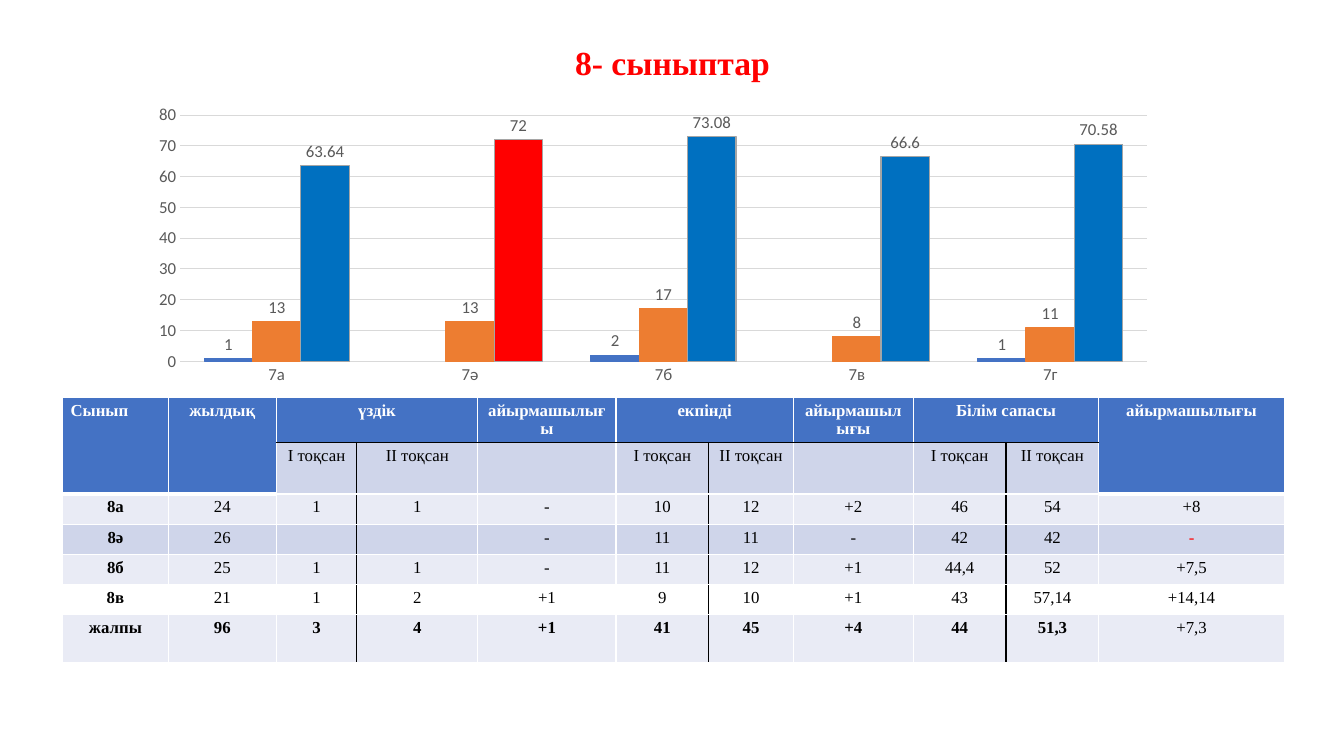
from lxml import etree
from pptx import Presentation
from pptx import util as u
from pptx.chart import data as chart_data
from pptx.dml import color
from pptx.enum import chart as ch, text
from pptx.oxml import ns

COLORS = {
    "red": "FF0000", "black": "000000", "white": "FFFFFF", "label": "595959",
    "grid": "D9D9D9", "blue": "4472C4", "orange": "ED7D31", "quality": "0070C0",
    "outline": "A5A5A5", "band_dark": "CFD5EA", "band_light": "E9EBF5",
}

# Chart content: values, fill and outline of each series
CLASSES = ["7а", "7ә", "7б", "7в", "7г"]
SERIES = [
    ("Series 1", [1, None, 2, None, 1], "blue", "blue"),
    ("Series 2", [13, 13, 17, 8, 11], "orange", "orange"),
    ("Series 3", [63.64, 72, 73.08, 66.6, 70.58], "quality", "outline"),
]

# Table content
COLUMN_WIDTHS = [1.05, 1.07, 0.8, 1.2, 1.37, 0.92, 0.84, 1.19, 0.92, 0.92, 1.84]
ROW_HEIGHTS = [0.43, 0.51, 0.3, 0.3, 0.3, 0.3, 0.47]
ROW_FILLS = ["blue", "band_dark", "band_light", "band_dark", "band_light", None, "band_light"]
DIFF, Q1, Q2 = "айырмашылығы", "І тоқсан", "ІІ тоқсан"
ROWS = [
    ["Сынып", "жылдық", "үздік", "", DIFF, "екпінді", "", DIFF, "Білім сапасы", "", DIFF],
    ["", "", Q1, Q2, "", Q1, Q2, "", Q1, Q2, ""],
    ["8а", "24", "1", "1", "-", "10", "12", "+2", "46", "54", "+8"],
    ["8ә", "26", "", "", "-", "11", "11", "-", "42", "42", "-"],
    ["8б", "25", "1", "1", "-", "11", "12", "+1", "44,4", "52", "+7,5"],
    ["8в", "21", "1", "2", "+1", "9", "10", "+1", "43", "57,14", "+14,14"],
    ["жалпы", "96", "3", "4", "+1", "41", "45", "+4", "44", "51,3", "+7,3"],
]
TALL_HEADERS = (0, 1, 10)   # headers that span both header rows
QUARTER_PAIRS = (2, 5, 8)   # first column of each pair of quarters
TOTAL_ROW, LAST_COLUMN = len(ROWS) - 1, len(COLUMN_WIDTHS) - 1


def rgb(name):
    return color.RGBColor.from_string(COLORS[name])


def is_bold(row, column):
    if row == TOTAL_ROW:
        return column != LAST_COLUMN
    return row == 0 or (row > 1 and column == 0)


def text_color(row, column):
    if row == 0:
        return "white"
    return "red" if (row, column) == (3, LAST_COLUMN) else "black"


def borders(row, column):
    """Colour and width of the four sides of a cell, keyed by XML tag."""
    sides = {tag: ("white", 1) for tag in ("a:lnL", "a:lnR", "a:lnT", "a:lnB")}
    if column in TALL_HEADERS and row < 2:
        sides["a:lnB"] = ("white", 3)
    elif row < 2:
        sides["a:lnB" if row == 0 else "a:lnT"] = ("black", 1)
    if row > 0 and column in QUARTER_PAIRS:
        sides["a:lnR"] = ("black", 1)
    if row > 0 and column - 1 in QUARTER_PAIRS:
        sides["a:lnL"] = ("black", 1)
    return sides


class SlideBuilder:
    """Holds the style and the current slide."""
    serif, sans = "Times New Roman", "Calibri"
    text_size = u.Pt(12)
    hairline = u.Pt(0.75)

    def __init__(self, deck):
        self.slide = deck.slides.add_slide(deck.slide_layouts[5])

    def style_font(self, font, face, size, color_name, bold=False):
        font.name, font.size, font.bold = face, size, bold
        font.color.rgb = rgb(color_name)

    def title(self, words, left, top, width, height):
        heading = self.slide.shapes.title
        heading.left, heading.top = u.Inches(left), u.Inches(top)
        heading.width, heading.height = u.Inches(width), u.Inches(height)
        frame = heading.text_frame
        frame.auto_size = text.MSO_AUTO_SIZE.NONE
        frame.vertical_anchor = text.MSO_ANCHOR.MIDDLE
        line = frame.paragraphs[0]
        line.alignment, line.line_spacing = text.PP_ALIGN.CENTER, 0.9
        run = line.add_run()
        run.text = words
        self.style_font(run.font, self.serif, u.Pt(24), "red", True)

    def chart(self, left, top, width, height):
        results = chart_data.CategoryChartData()
        results.categories = CLASSES
        for name, values, _, _ in SERIES:
            results.add_series(name, values)
        chart = self.slide.shapes.add_chart(
            ch.XL_CHART_TYPE.COLUMN_CLUSTERED, u.Inches(left), u.Inches(top),
            u.Inches(width), u.Inches(height), results).chart
        chart.has_title = chart.has_legend = False
        self.style_font(chart.font, self.sans, u.Pt(10), "black")

        # Bars and their labels
        bars = chart.plots[0]
        bars.gap_width, bars.overlap, bars.vary_by_categories = 100, 0, False
        for series, (_, _, fill, outline) in zip(bars.series, SERIES):
            self.paint_bar(series.format, fill, outline)
            labels = series.data_labels
            labels.show_value = True
            labels.position = ch.XL_LABEL_POSITION.OUTSIDE_END
            self.style_font(labels.font, self.sans, self.text_size, "label")
        self.paint_bar(bars.series[2].points[1].format, "red", "outline")

        # Axes and gridlines
        classes, scale = chart.category_axis, chart.value_axis
        for axis in (classes, scale):
            axis.major_tick_mark = axis.minor_tick_mark = ch.XL_TICK_MARK.NONE
            self.style_font(axis.tick_labels.font, self.sans, self.text_size, "label")
        scale.minimum_scale, scale.maximum_scale, scale.major_unit = 0, 80, 10
        scale.format.line.fill.background()
        for line in (classes.format.line, scale.major_gridlines.format.line):
            line.color.rgb, line.width = rgb("grid"), self.hairline
        self.place_plot(chart, x=0.084, y=0.121, w=0.86, h=0.793)

    def paint_bar(self, look, fill, outline):
        look.fill.solid()
        look.fill.fore_color.rgb = rgb(fill)
        look.line.color.rgb, look.line.width = rgb(outline), self.hairline

    def place_plot(self, chart, **box):
        area = chart._chartSpace.find(".//" + ns.qn("c:plotArea"))
        for old in area.findall(ns.qn("c:layout")):
            area.remove(old)
        layout = etree.Element(ns.qn("c:layout"))
        area.insert(0, layout)
        manual = etree.SubElement(layout, ns.qn("c:manualLayout"))
        settings = {"layoutTarget": "inner", "xMode": "edge", "yMode": "edge", **box}
        for tag, value in settings.items():
            etree.SubElement(manual, ns.qn("c:" + tag), val=str(value))

    def table(self, left, top):
        grid = self.slide.shapes.add_table(
            len(ROWS), len(COLUMN_WIDTHS), u.Inches(left), u.Inches(top),
            u.Inches(sum(COLUMN_WIDTHS)), u.Inches(sum(ROW_HEIGHTS))).table
        grid.horz_banding = False
        for column, width in zip(grid.columns, COLUMN_WIDTHS):
            column.width = u.Inches(width)
        for row, height in zip(grid.rows, ROW_HEIGHTS):
            row.height = u.Inches(height)
        for i, words in enumerate(ROWS):
            for j, word in enumerate(words):
                self.cell(grid.cell(i, j), i, j, word)
        for j in TALL_HEADERS:
            grid.cell(0, j).merge(grid.cell(1, j))
        for j in QUARTER_PAIRS:
            grid.cell(0, j).merge(grid.cell(0, j + 1))

    def cell(self, cell, row, column, word):
        cell.margin_left = cell.margin_right = u.Inches(0.08)
        cell.margin_top = cell.margin_bottom = u.Inches(0.04)
        line = cell.text_frame.paragraphs[0]
        first = row == column == 0
        line.alignment = text.PP_ALIGN.LEFT if first else text.PP_ALIGN.CENTER
        if word:
            run = line.add_run()
            run.text = word
            self.style_font(run.font, self.serif, self.text_size,
                            text_color(row, column), is_bold(row, column))
        else:
            # Keeps empty cells as low as filled ones
            etree.SubElement(line._p, ns.qn("a:endParaRPr"), sz="1200")

        # Borders come before the fill in the cell properties
        properties = cell._tc.get_or_add_tcPr()
        for tag, (name, width) in borders(row, column).items():
            side = etree.SubElement(properties, ns.qn(tag), w=str(u.Pt(width)))
            solid = etree.SubElement(side, ns.qn("a:solidFill"))
            etree.SubElement(solid, ns.qn("a:srgbClr"), val=COLORS[name])
        fill = "blue" if row < 2 and column in TALL_HEADERS else ROW_FILLS[row]
        if fill:
            cell.fill.solid()
            cell.fill.fore_color.rgb = rgb(fill)
        else:
            cell.fill.background()


def main():
    deck = Presentation()
    deck.slide_width, deck.slide_height = u.Inches(13.33), u.Inches(7.5)
    results = SlideBuilder(deck)
    results.title("8- сыныптар", 0.92, 0.4, 11.5, 0.48)
    results.chart(0.85, 0.77, 11.15, 3.08)
    results.table(0.62, 3.94)
    deck.save("out.pptx")


if __name__ == "__main__":
    main()
